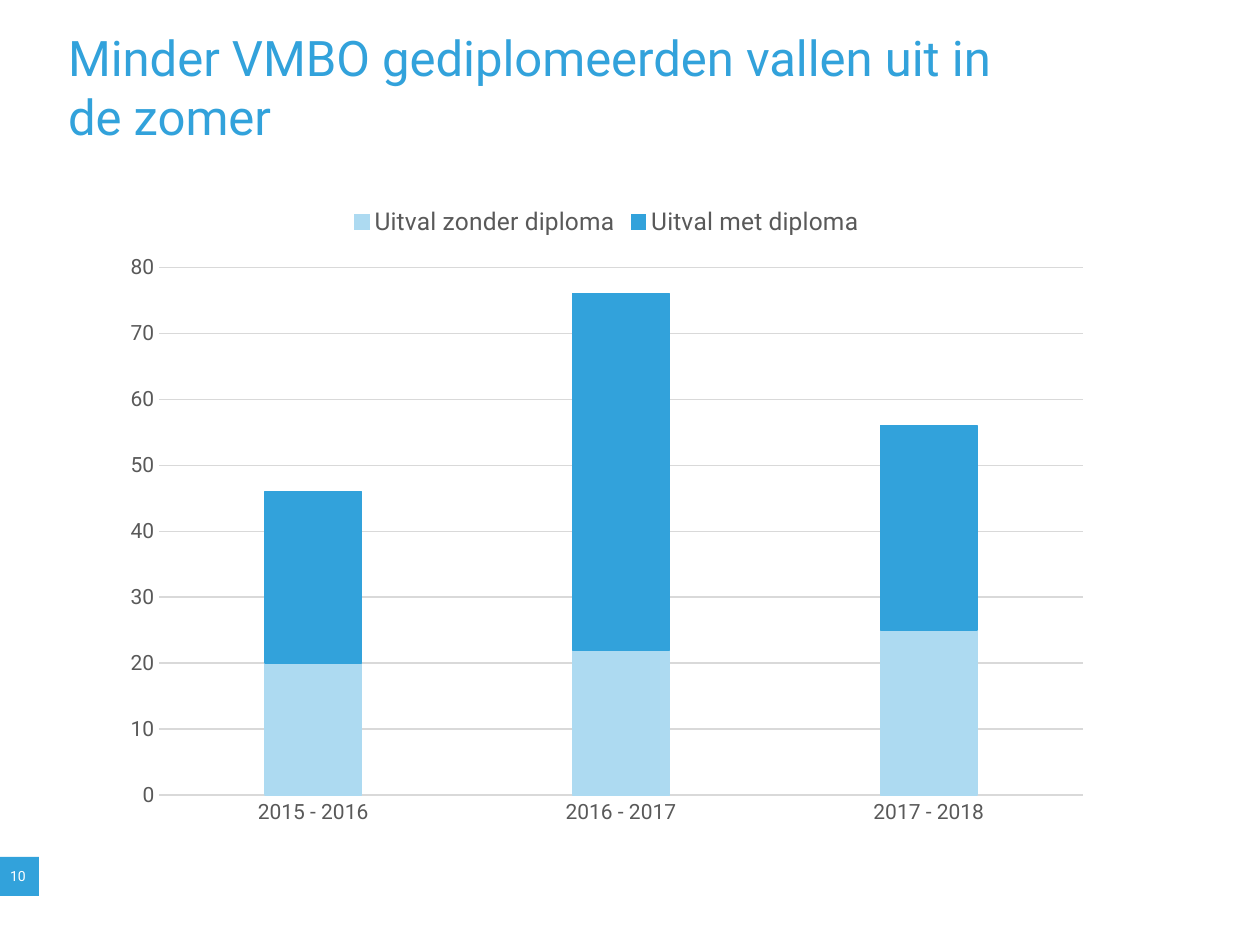
"""Build a slide with a stacked column chart of VMBO dropout per school year."""
from pptx import Presentation, util as u
from pptx.chart.data import CategoryChartData
from pptx.dml.color import RGBColor
from pptx.enum import chart as ch, shapes, text

HUES = {"blue": "32A2DB", "pale": "ADDAF1", "grey": "595959",
        "rule": "D9D9D9", "white": "FFFFFF"}
FACE = "Roboto"
ROWS = {"Uitval zonder diploma": ("pale", (20, 22, 25)),
        "Uitval met diploma": ("blue", (26, 54, 31))}


def rgb(name):
    return RGBColor.from_string(HUES[name])


def style(font, size, hue):
    font.name, font.size, font.color.rgb = FACE, u.Pt(size), rgb(hue)


deck = Presentation()
deck.slide_width, deck.slide_height = u.Inches(10), u.Inches(7.5)
slide = deck.slides.add_slide(deck.slide_layouts[5])

badge = slide.shapes.add_shape(shapes.MSO_SHAPE.RECTANGLE, 0, u.Inches(6.8),
                               u.Inches(0.31), u.Inches(0.31))
badge.shadow.inherit = False
badge.fill.solid()
badge.fill.fore_color.rgb = rgb("blue")
badge.line.fill.background()
frame = badge.text_frame
frame.margin_left = u.Inches(0.08)
frame.margin_right = frame.margin_top = frame.margin_bottom = 0
frame.vertical_anchor = text.MSO_ANCHOR.MIDDLE
frame.word_wrap = False
frame.text = "10"
frame.paragraphs[0].alignment = text.PP_ALIGN.LEFT
style(frame.paragraphs[0].font, 8, "white")

title = slide.shapes.title
title.left, title.top = u.Inches(0.5), u.Inches(0.18)
title.width, title.height = u.Inches(7.71), u.Inches(1.16)
frame = title.text_frame
frame.margin_left = frame.margin_right = u.Inches(0.04)
frame.margin_top = frame.margin_bottom = u.Inches(0.04)
frame.vertical_anchor = text.MSO_ANCHOR.TOP
frame.word_wrap = True
frame.auto_size = text.MSO_AUTO_SIZE.NONE
frame.text = "Minder VMBO gediplomeerden vallen uit in de zomer"
frame.paragraphs[0].alignment = text.PP_ALIGN.LEFT
style(frame.paragraphs[0].font, 28, "blue")

data = CategoryChartData()
data.categories = ["2015 - 2016", "2016 - 2017", "2017 - 2018"]
for name, (hue, vals) in ROWS.items():
    data.add_series(name, vals)
chart = slide.shapes.add_chart(
    ch.XL_CHART_TYPE.COLUMN_STACKED, u.Inches(0.88), u.Inches(1.53),
    u.Inches(7.87), u.Inches(5.12), data).chart
chart.has_title = False
style(chart.font, 12, "grey")

chart.has_legend = True
chart.legend.position = ch.XL_LEGEND_POSITION.TOP
chart.legend.include_in_layout = False
style(chart.legend.font, 14, "grey")

plot = chart.plots[0]
plot.gap_width, plot.overlap = 219, 100
plot.vary_by_categories = False
for series, (hue, vals) in zip(plot.series, ROWS.values()):
    series.format.fill.solid()
    series.format.fill.fore_color.rgb = rgb(hue)
    series.format.line.color.rgb = rgb(hue)
    series.format.line.width = u.Pt(0.75)

cat, val = chart.category_axis, chart.value_axis
for axis in (cat, val):
    axis.major_tick_mark = axis.minor_tick_mark = ch.XL_TICK_MARK.NONE
    style(axis.tick_labels.font, 12, "grey")
val.minimum_scale, val.maximum_scale, val.major_unit = 0, 80, 10
val.has_major_gridlines = True
val.format.line.fill.background()
for part in (cat, val.major_gridlines):
    part.format.line.color.rgb = rgb("rule")
    part.format.line.width = u.Pt(0.75)

deck.save("out.pptx")
